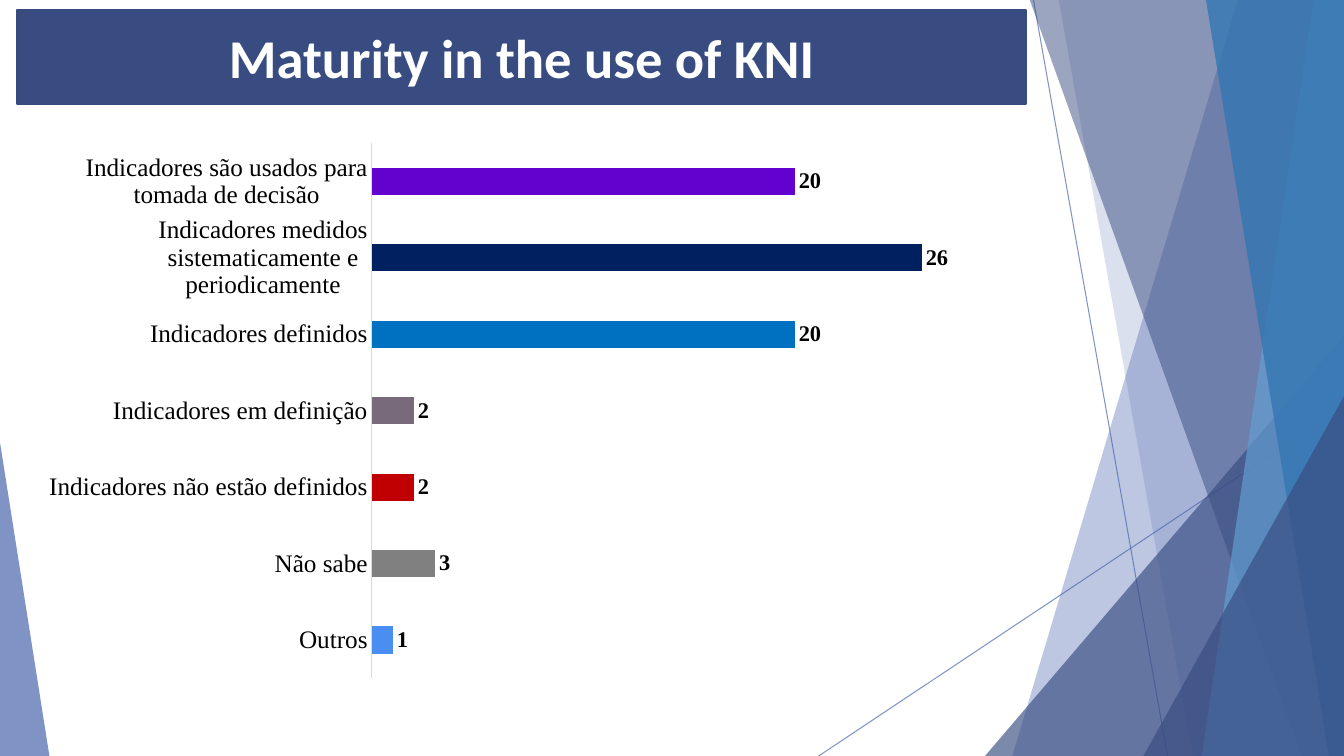
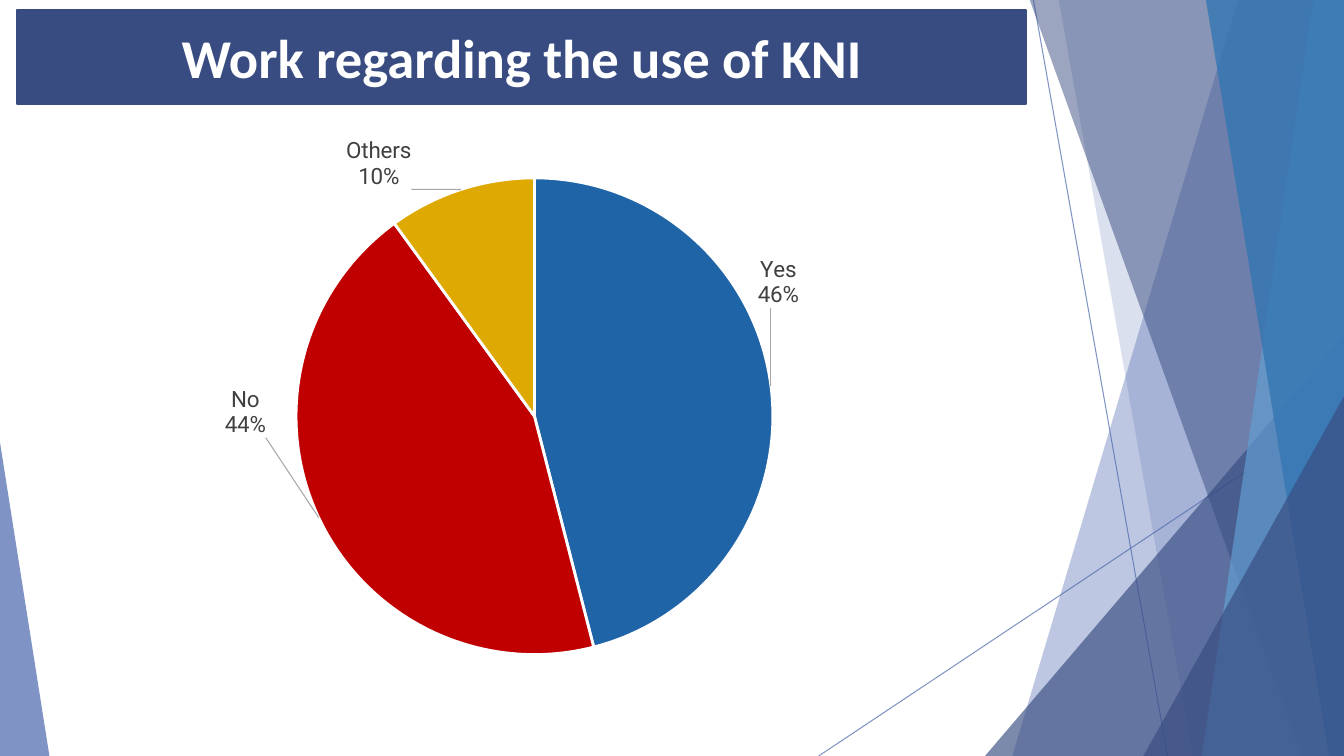
from dataclasses import dataclass

from lxml.etree import SubElement
from pptx import Presentation
from pptx.chart.data import CategoryChartData
from pptx.dml.color import RGBColor
from pptx.enum.chart import XL_CHART_TYPE as ChartType
from pptx.enum.chart import XL_LABEL_POSITION as LabelPosition
from pptx.enum.chart import XL_TICK_MARK as TickMark
from pptx.enum.shapes import MSO_CONNECTOR as Connector
from pptx.enum.shapes import MSO_SHAPE as Shape
from pptx.enum.text import MSO_ANCHOR as Anchor
from pptx.enum.text import PP_ALIGN as Align
from pptx.oxml import parse_xml
from pptx.oxml.ns import nsdecls, qn
from pptx.util import Inches, Pt

WIDTH, HEIGHT = 13.33, 7.5
BLUE, NAVY, SKY, OCEAN = "4A66AC", "384C81", "629DD1", "3477B2"
WHITE, BLACK = "FFFFFF", "000000"
BAR_FONT, PIE_FONT, TITLE_FONT = "Times New Roman", "Roboto", "Calibri"


# Colour and font helpers
def paint(fill, color: str, opacity: int = 100) -> None:
    fill.solid()
    fill.fore_color.rgb = RGBColor.from_string(color)
    if opacity < 100:
        clr = fill._xPr.find(qn("a:solidFill"))[0]
        SubElement(clr, qn("a:alpha")).set("val", str(opacity * 1000))


def set_font(font, name: str, size: float, color: str, bold: bool = False) -> None:
    font.name, font.size, font.bold = name, Pt(size), bold
    paint(font.fill, color)


def finish_facet(shape, color: str, opacity: int) -> None:
    shape.shadow.inherit = False
    shape.line.fill.background()
    paint(shape.fill, color, opacity)


# Facets of the background
@dataclass
class Ray:
    start: tuple[float, float]
    end: tuple[float, float]

    def draw(self, slide) -> None:
        ends = [Inches(v) for v in (*self.start, *self.end)]
        ray = slide.shapes.add_connector(Connector.STRAIGHT, *ends)
        ray.line.width = Pt(0.75)
        paint(ray.line.fill, BLUE, 70)
        SubElement(ray._element.spPr, qn("a:effectLst"))


@dataclass
class Band:
    """Facet from a slanted left side to the right edge of the slide."""
    top_x: float
    bottom_x: float
    color: str
    opacity: int

    def draw(self, slide) -> None:
        top = -0.01
        corners = [(self.top_x, top), (WIDTH, top), (WIDTH, HEIGHT), (self.bottom_x, HEIGHT)]
        points = [(Inches(x), Inches(y)) for x, y in corners]
        outline = slide.shapes.build_freeform(*points[0])
        outline.add_line_segments(points[1:], close=True)
        finish_facet(outline.convert_to_shape(), self.color, self.opacity)


@dataclass
class Wedge:
    """Right-angled triangle standing on the bottom edge of the slide."""
    left: float
    top: float
    width: float
    apex: int
    color: str
    opacity: int

    def draw(self, slide) -> None:
        wedge = slide.shapes.add_shape(
            Shape.ISOSCELES_TRIANGLE, Inches(self.left), Inches(self.top),
            Inches(self.width), Inches(HEIGHT - self.top))
        wedge.adjustments[0] = self.apex
        finish_facet(wedge, self.color, self.opacity)


BACKGROUND = [
    Ray((10.25, 0), (11.58, HEIGHT)),
    Ray((WIDTH, 4.03), (8.12, HEIGHT)),
    Band(12.28, 10.04, BLUE, 36),
    Band(10.5, 11.83, BLUE, 20),
    Wedge(9.77, 3.33, 3.56, 1, NAVY, 66),
    Band(10.21, 12.91, NAVY, 50),
    Band(13.03, 11.92, SKY, 70),
    Band(11.96, 13.18, OCEAN, 80),
    Wedge(11.34, 3.93, 1.99, 1, NAVY, 66),
    Wedge(0, 4.39, 0.49, 0, BLUE, 70),
]


def add_titled_slide(deck, title: str):
    slide = deck.slides.add_slide(deck.slide_layouts[6])
    for facet in BACKGROUND:
        facet.draw(slide)
    banner = slide.shapes.add_shape(
        Shape.RECTANGLE, Inches(0.17), Inches(0.1), Inches(10.01), Inches(0.93))
    banner.shadow.inherit = False
    paint(banner.fill, NAVY)
    paint(banner.line.fill, "374B7F")
    banner.line.width = Pt(1.5)
    banner.text_frame.vertical_anchor = Anchor.MIDDLE
    heading = banner.text_frame.paragraphs[0]
    heading.text = title
    heading.alignment = Align.CENTER
    set_font(heading.font, TITLE_FONT, 39, WHITE, bold=True)
    return slide


# Charts
@dataclass
class Answer:
    category: str
    value: float
    color: str


@dataclass
class Slice(Answer):
    label: str
    shift: tuple[float, float]


MATURITY = [
    Answer("Outros", 1, "4A8EF2"),
    Answer("Não sabe", 3, "808080"),
    Answer("Indicadores não estão definidos", 2, "C00000"),
    Answer("Indicadores em definição", 2, "78697B"),
    Answer("Indicadores definidos", 20, "0070C0"),
    Answer("Indicadores medidos sistematicamente e periodicamente", 26, "002060"),
    Answer("Indicadores são usados para tomada de decisão", 20, "6302CE"),
]

WORK = [
    Slice("Sim", 0.46, "2064A8", "Yes\n46%", (-0.02, -0.14)),
    Slice("Não", 0.44, "C00000", "No\n44%", (-0.05, -0.24)),
    Slice("Outros", 0.1, "DEA900", "Others\n10%", (-0.05, 0.01)),
]


def add_answer_chart(slide, kind, box: tuple[float, float, float, float],
                     answers: list, font: str, size: float, number_format: str):
    data = CategoryChartData(number_format=number_format)
    data.categories = [answer.category for answer in answers]
    data.add_series("Series 1", [answer.value for answer in answers])
    chart = slide.shapes.add_chart(kind, *(Inches(v) for v in box), data).chart
    chart.has_title = chart.has_legend = False
    set_font(chart.font, font, size, BLACK)
    series = chart.plots[0].series[0]
    for index, answer in enumerate(answers):
        paint(series.points[index].format.fill, answer.color)
    labels = series.data_labels
    labels.show_value = True
    labels.number_format, labels.number_format_is_linked = number_format, False
    labels.position = LabelPosition.OUTSIDE_END
    return chart


def manual_layout(target: str = "", **fractions: float):
    inner = f'<c:layoutTarget val="{target}"/>' if target else ""
    modes = '<c:xMode val="edge"/><c:yMode val="edge"/>' if target else ""
    values = "".join(f'<c:{key} val="{value}"/>' for key, value in fractions.items())
    return parse_xml(f'<c:layout {nsdecls("c")}><c:manualLayout>'
                     f'{inner}{modes}{values}</c:manualLayout></c:layout>')


def add_maturity_chart(slide) -> None:
    chart = add_answer_chart(slide, ChartType.BAR_CLUSTERED, (0.29, 1.31, 9.89, 5.53),
                             MATURITY, BAR_FONT, 11, "General")
    plot = chart.plots[0]
    plot.gap_width = 182
    plot.vary_by_categories = False
    set_font(plot.series[0].data_labels.font, BAR_FONT, 16, BLACK, bold=True)
    scale = chart.value_axis
    scale.visible = scale.has_major_gridlines = False
    scale.minimum_scale, scale.maximum_scale = 0, 30
    names = chart.category_axis
    names.major_tick_mark = names.minor_tick_mark = TickMark.NONE
    set_font(names.tick_labels.font, BAR_FONT, 18, BLACK)
    paint(names.format.line.fill, "D9D9D9")
    names.format.line.width = Pt(0.75)


def add_work_chart(slide) -> None:
    chart = add_answer_chart(slide, ChartType.PIE, (0.34, 1.27, 9.45, 5.5),
                             WORK, PIE_FONT, 10, "0%")
    plot = chart.plots[0]
    plot.vary_by_categories = True
    series = plot.series[0]
    set_font(series.data_labels.font, PIE_FONT, 16, "404040")
    for index, part in enumerate(WORK):
        point = series.points[index]
        paint(point.format.line.fill, WHITE)
        point.format.line.width = Pt(2)
        label = point.data_label
        label.text_frame.text = part.label
        for line in label.text_frame.paragraphs:
            set_font(line.runs[0].font, PIE_FONT, 16, "404040")
        label.position = LabelPosition.OUTSIDE_END
        x, y = part.shift
        label._get_or_add_dLbl().find(qn("c:idx")).addnext(manual_layout(x=x, y=y))

    # Leader lines from labels to slices
    series.data_labels._element.append(parse_xml(
        f'<c:leaderLines {nsdecls("c", "a")}><c:spPr><a:ln w="9525"><a:solidFill>'
        '<a:srgbClr val="A6A6A6"/></a:solidFill></a:ln></c:spPr></c:leaderLines>'))

    # Place of the pie within the chart
    area = chart._chartSpace.chart.plotArea
    for old in area.findall(qn("c:layout")):
        area.remove(old)
    area.insert(0, manual_layout("inner", x=0.05, y=0.09, w=0.95, h=0.86))


def main() -> None:
    deck = Presentation()
    deck.slide_width, deck.slide_height = Inches(WIDTH), Inches(HEIGHT)
    add_maturity_chart(add_titled_slide(deck, "Maturity in the use of KNI"))
    add_work_chart(add_titled_slide(deck, "Work regarding the use of KNI"))
    deck.save("out.pptx")


if __name__ == "__main__":
    main()
